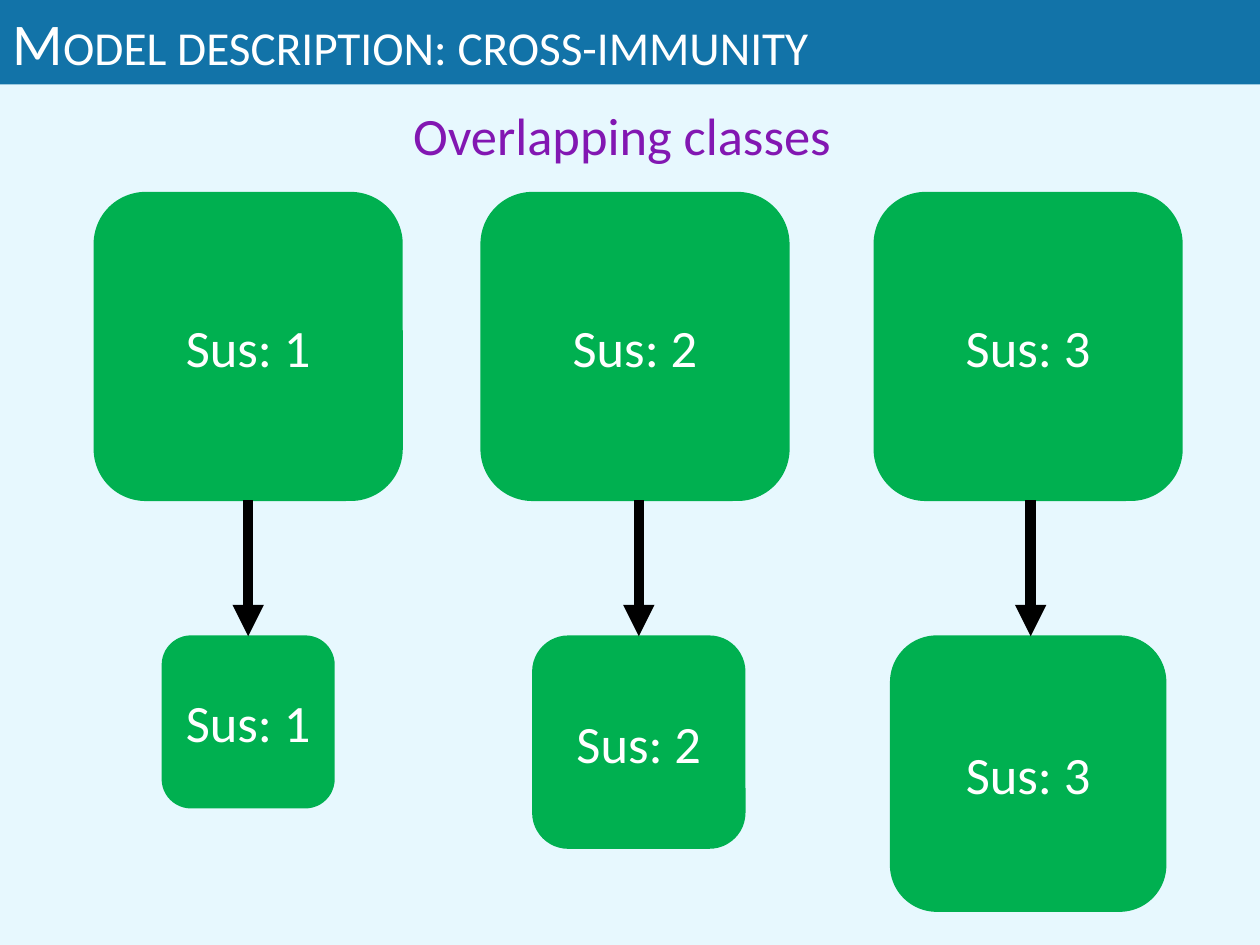
from lxml import etree
from pptx import Presentation
from pptx.dml.color import RGBColor
from pptx.enum import shapes, text
from pptx.oxml.ns import qn
from pptx.util import Inches, Pt

PALE_BLUE = RGBColor(0xE7, 0xF8, 0xFE)
BLUE = RGBColor(0x12, 0x73, 0xA8)
GREEN = RGBColor(0x00, 0xB0, 0x50)
PURPLE = RGBColor(0x82, 0x17, 0xB2)
WHITE = RGBColor(0xFF, 0xFF, 0xFF)
BLACK = RGBColor(0, 0, 0)

# label, left of the upper box, arrow x, left and side of the lower box
CLASSES = [
    ("Sus: 1", 0.75, 1.97, 1.29, 1.36),
    ("Sus: 2", 3.82, 5.07, 4.23, 1.68),
    ("Sus: 3", 6.94, 8.18, 7.07, 2.18),
]
UPPER_SIDE = 2.44
ARROW_LENGTH = 1.08


def write(tf, words, size, color, align):
    tf.text = words
    p = tf.paragraphs[0]
    p.alignment = align
    r = p.runs[0]
    r.font.name = "Calibri"
    r.font.size = Pt(size)
    r.font.color.rgb = color
    return r


def add_title(slide, left, top, width, height):
    sp = slide.shapes.title
    sp.left, sp.top = Inches(left), Inches(top)
    sp.width, sp.height = Inches(width), Inches(height)
    sp.fill.solid()
    sp.fill.fore_color.rgb = BLUE
    tf = sp.text_frame
    tf.auto_size = text.MSO_AUTO_SIZE.NONE
    tf.vertical_anchor = text.MSO_ANCHOR.TOP
    r = write(tf, "Model description: cross-immunity", 33.8, WHITE, text.PP_ALIGN.LEFT)
    r.font._element.set("cap", "small")


def add_subtitle(slide, left, top, width, height):
    sp = slide.shapes.add_textbox(Inches(left), Inches(top), Inches(width), Inches(height))
    sp.text_frame.word_wrap = False
    write(sp.text_frame, "Overlapping classes", 30, PURPLE, text.PP_ALIGN.LEFT)


def add_class_box(slide, label, left, top, side):
    sp = slide.shapes.add_shape(
        shapes.MSO_SHAPE.ROUNDED_RECTANGLE,
        Inches(left), Inches(top), Inches(side), Inches(side))
    sp.shadow.inherit = False
    sp.fill.solid()
    sp.fill.fore_color.rgb = GREEN
    sp.line.color.rgb = GREEN
    sp.line.width = Pt(1)
    tf = sp.text_frame
    tf.word_wrap = False
    tf.vertical_anchor = text.MSO_ANCHOR.MIDDLE
    write(tf, label, 30, WHITE, text.PP_ALIGN.CENTER)


def add_down_arrow(slide, x, top, length):
    line = slide.shapes.add_connector(
        shapes.MSO_CONNECTOR.STRAIGHT,
        Inches(x), Inches(top), Inches(x), Inches(top + length))
    line.line.color.rgb = BLACK
    line.line.width = Pt(6)
    ln = line.line._get_or_add_ln()
    etree.SubElement(ln, qn("a:tailEnd"), type="triangle")
    etree.SubElement(line._element.spPr, qn("a:effectLst"))


def add_classes(slide, top):
    """Each susceptible class above the smaller class it leads to."""
    arrow_top = top + UPPER_SIDE
    for label, upper_left, arrow_x, lower_left, lower_side in CLASSES:
        add_class_box(slide, label, upper_left, top, UPPER_SIDE)
        add_class_box(slide, label, lower_left, arrow_top + ARROW_LENGTH, lower_side)
        add_down_arrow(slide, arrow_x, arrow_top, ARROW_LENGTH)


def main():
    prs = Presentation()
    prs.slide_width, prs.slide_height = Inches(10), Inches(7.5)
    slide = prs.slides.add_slide(prs.slide_layouts[5])
    slide.background.fill.solid()
    slide.background.fill.fore_color.rgb = PALE_BLUE
    add_title(slide, 0, 0, 10, 0.67)
    add_classes(slide, 1.53)
    add_subtitle(slide, 3.18, 0.77, 3.55, 0.61)
    prs.save("out.pptx")


if __name__ == "__main__":
    main()
